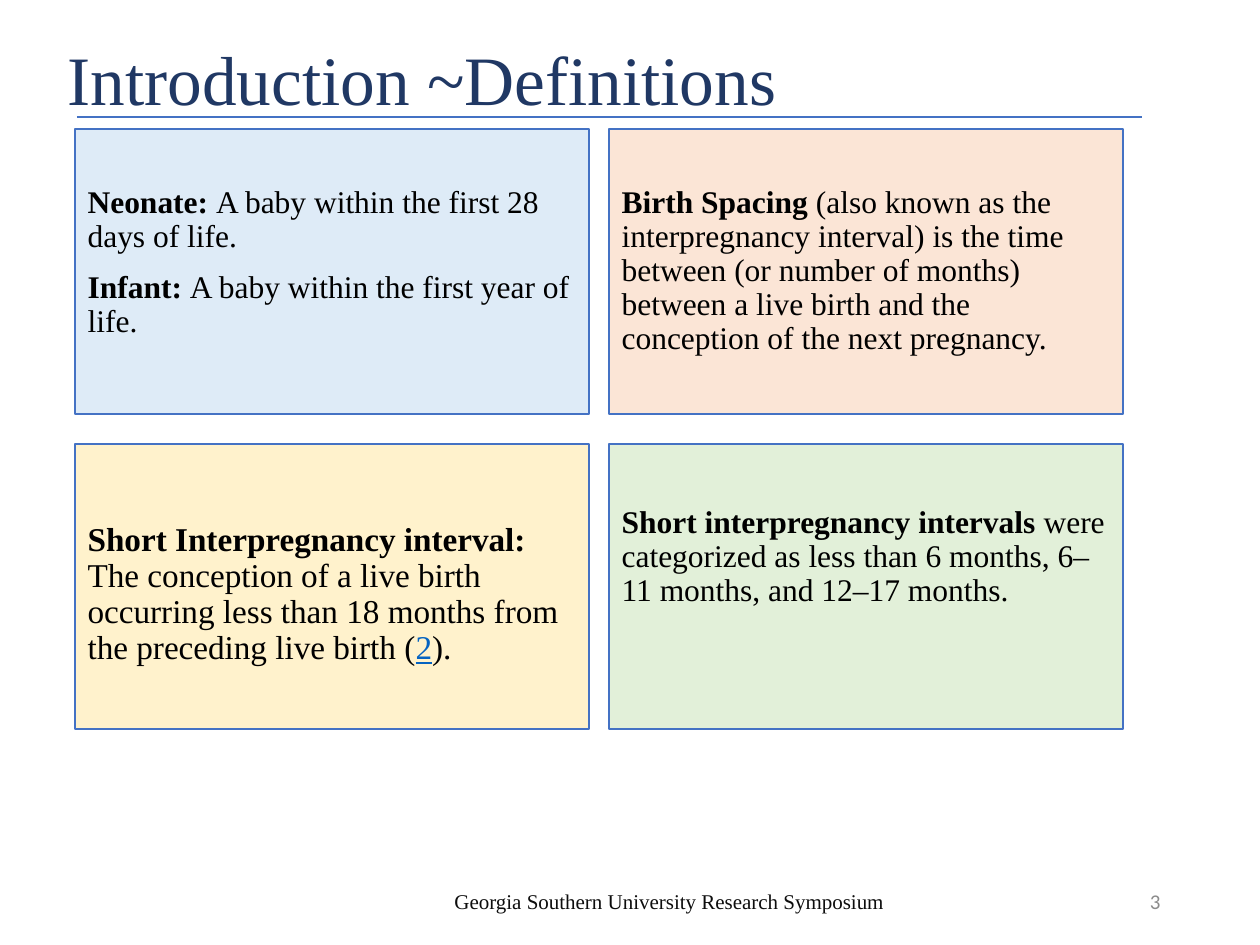
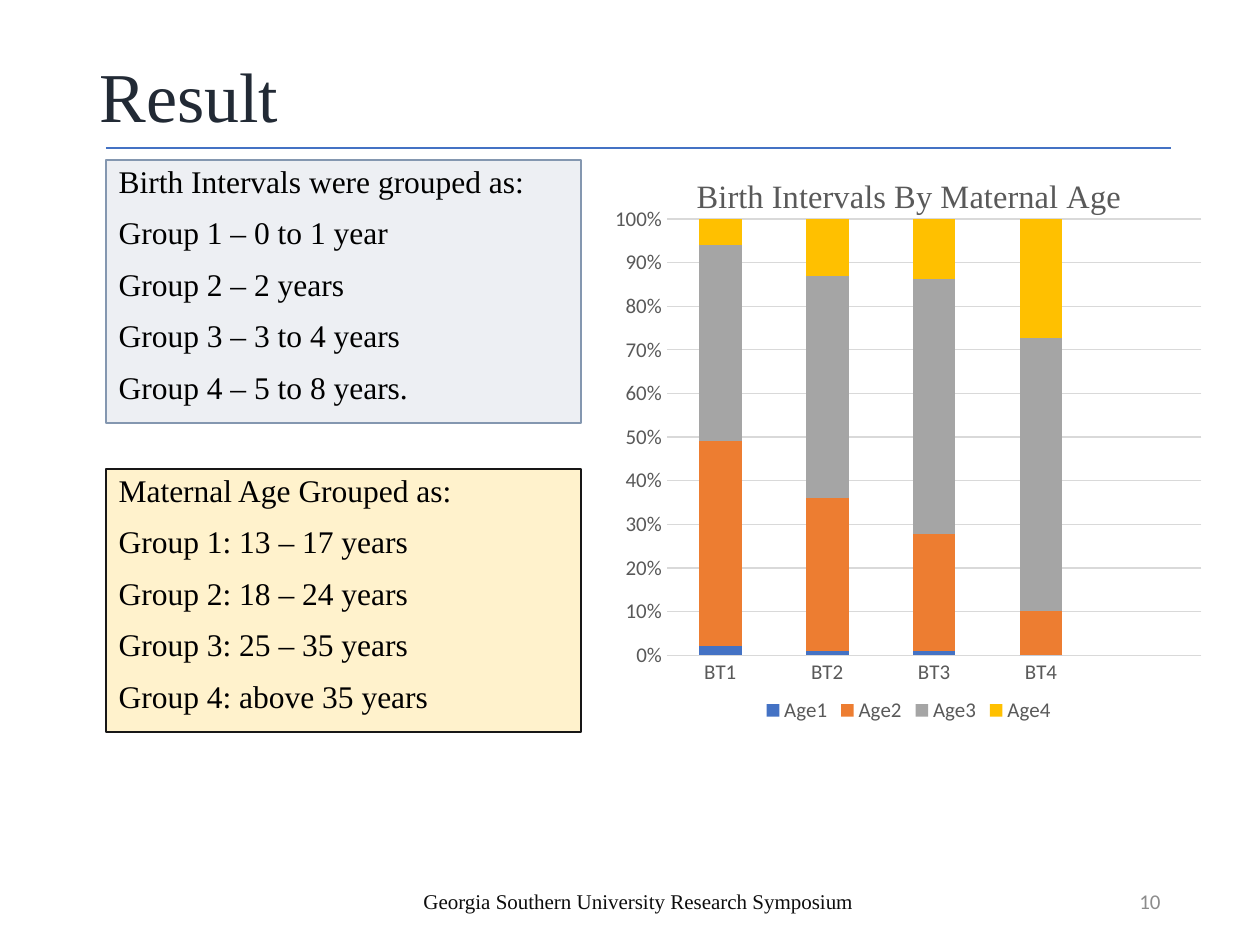
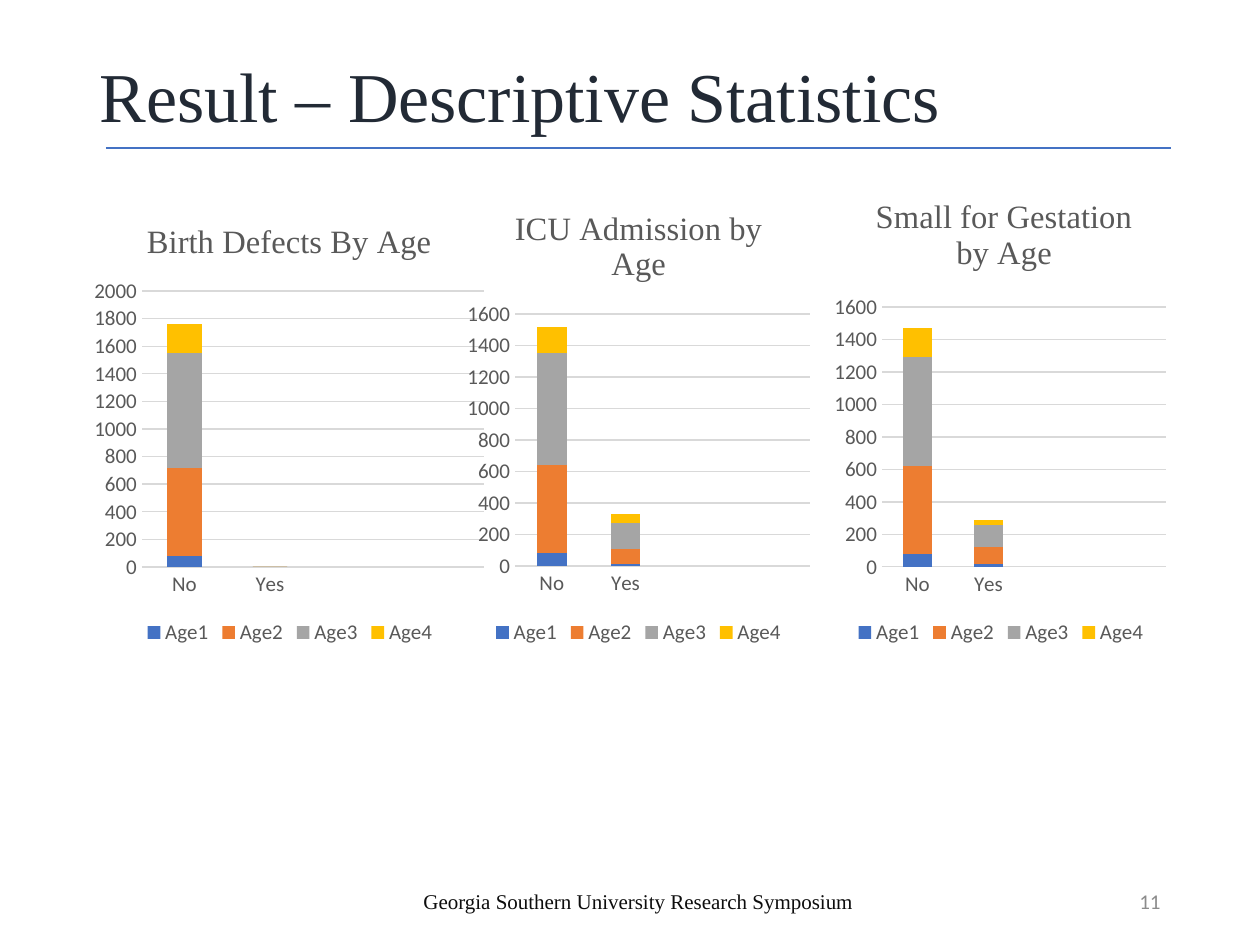
from dataclasses import dataclass
from lxml.etree import SubElement
from pptx import Presentation
from pptx.chart.data import CategoryChartData
from pptx.dml.color import RGBColor
from pptx.enum.chart import XL_CHART_TYPE, XL_LEGEND_POSITION, XL_TICK_MARK
from pptx.enum.shapes import MSO_CONNECTOR
from pptx.enum.text import MSO_ANCHOR, MSO_AUTO_SIZE, PP_ALIGN
from pptx.oxml import parse_xml
from pptx.oxml.ns import nsdecls, qn
from pptx.util import Pt

PX = 914400 / 126


@dataclass(frozen=True)
class Theme:
    serif: str = "Times New Roman"
    sans: str = "Calibri"
    navy: str = "203864"
    slate: str = "222A35"
    black: str = "000000"
    foot: str = "0D0D0D"
    page: str = "8C8C8C"
    link: str = "0563C1"
    blue: str = "4472C4"
    steel: str = "8497B0"
    dark: str = "181717"
    sky: str = "DEEBF7"
    peach: str = "FBE5D6"
    cream: str = "FFF2CC"
    mint: str = "E2F0D9"
    mist: str = "EDEFF3"
    label: str = "595959"
    grid: str = "D9D9D9"
    bars: tuple = ("4472C4", "ED7D31", "A5A5A5", "FFC000")
    body: float = 18
    small: float = 12
    head: float = 18.6
    line: float = 0.75


T = Theme()


def write(frame, paras, size, color, font=T.serif, align=PP_ALIGN.LEFT, tight=True):
    """Write paragraphs of (text, flags) runs; b is bold, u is link style."""
    frame.word_wrap = True
    frame.auto_size = MSO_AUTO_SIZE.NONE
    for n, runs in enumerate(paras):
        para = frame.paragraphs[0] if n == 0 else frame.add_paragraph()
        para.alignment = align
        para.line_spacing = 0.9 if tight else 1.0
        para.space_before = Pt(10 if n else 0)
        props = para._p.get_or_add_pPr()
        props.set("marL", "0")
        props.set("indent", "0")
        SubElement(props, qn("a:buNone"))
        for text, flags in runs:
            run = para.add_run()
            run.text = text
            run.font.name = font
            run.font.size = Pt(size)
            run.font.bold = "b" in flags
            run.font.underline = "u" in flags
            tint = T.link if "u" in flags else color
            run.font.color.rgb = RGBColor.from_string(tint)


def draw(slide, kind, box, plot, head, title, cats, rows, form):
    """Add a stacked chart; plot is its inner area and head its title corner."""
    data = CategoryChartData()
    data.categories = cats
    for n, row in enumerate(rows, 1):
        data.add_series(f"Age{n}", row)
    chart = slide.shapes.add_chart(kind, *[round(v * PX) for v in box], data).chart
    chart.font.name, chart.font.size = T.sans, Pt(T.small)
    chart.font.color.rgb = RGBColor.from_string(T.label)

    # Title
    chart.has_title = True
    run = chart.chart_title.text_frame.paragraphs[0].add_run()
    run.text = title
    run.font.name, run.font.size, run.font.bold = T.serif, Pt(T.head), False
    run.font.color.rgb = RGBColor.from_string(T.label)
    chart.chart_title.include_in_layout = False

    # Bars
    bars = chart.plots[0]
    bars.gap_width, bars.overlap, bars.vary_by_categories = 150, 100, False
    for series, tint in zip(bars.series, T.bars):
        series.format.fill.solid()
        series.format.fill.fore_color.rgb = RGBColor.from_string(tint)
        series.invert_if_negative = False

    # Axes and legend
    cat, val = chart.category_axis, chart.value_axis
    for axis in (cat, val):
        axis.major_tick_mark = axis.minor_tick_mark = XL_TICK_MARK.NONE
    val.has_major_gridlines = True
    for line in (cat.format.line, val.major_gridlines.format.line):
        line.color.rgb = RGBColor.from_string(T.grid)
        line.width = Pt(T.line)
    val.format.line.fill.background()
    val.tick_labels.number_format = form
    val.tick_labels.number_format_is_linked = False
    chart.has_legend = True
    chart.legend.position = XL_LEGEND_POSITION.BOTTOM
    chart.legend.include_in_layout = False

    # Fixed places of the title and the inner plot area
    left, top, wide, high = box
    spots = {"x": (plot[0] - left) / wide, "y": (plot[1] - top) / high,
             "w": plot[2] / wide, "h": plot[3] / high}
    corner = {"x": (head[0] - left) / wide, "y": (head[1] - top) / high}
    area = chart._chartSpace.chart.plotArea
    name = chart.chart_title._element
    for host, slot, vals in ((area, 0, spots), (name, 1, corner)):
        for old in host.findall(qn("c:layout")):
            host.remove(old)
        inner = '<c:layoutTarget val="inner"/>' if host is area else ""
        modes = "".join(f'<c:{k}Mode val="edge"/>' for k in "xy")
        sizes = "".join(f'<c:{k} val="{v:.3f}"/>' for k, v in vals.items())
        host.insert(slot, parse_xml(
            f'<c:layout {nsdecls("c")}><c:manualLayout>{inner}{modes}{sizes}'
            "</c:manualLayout></c:layout>"))


deck = Presentation()
deck.slide_width, deck.slide_height = round(1260 * PX), round(945 * PX)

# Shared frame: title, rule, footer and page number
pages = [
    # layout, title, title box, size, colour, rule x and y, footer x, number
    (4, "Introduction ~Definitions", (55, 39, 1086, 89), 39.6, T.navy, 77, 117, 417, "3"),
    (3, "Result", (87, 51, 1086, 98), 40, T.slate, 106, 148, 386, "10"),
    (5, "Result – Descriptive Statistics", (87, 51, 1086, 98), 40, T.slate, 106, 148, 386, "11"),
]
slides = []
for layout, title, box, size, color, left, top, foot, number in pages:
    slide = deck.slides.add_slide(deck.slide_layouts[layout])
    slides.append(slide)
    name = slide.shapes.title
    name.left, name.top, name.width, name.height = [round(v * PX) for v in box]
    name.text_frame.vertical_anchor = MSO_ANCHOR.MIDDLE
    write(name.text_frame, [[(title, "")]], size, color)
    rule = slide.shapes.add_connector(
        MSO_CONNECTOR.STRAIGHT, *[round(v * PX) for v in (left, top, left + 1065, top)])
    rule.line.color.rgb = RGBColor.from_string(T.blue)
    rule.line.width = Pt(T.line)
    SubElement(rule._element.spPr, qn("a:effectLst"))
    for x, wide, text, tint, font, align in (
            (foot, 505, "Georgia Southern University Research Symposium",
             T.foot, T.serif, PP_ALIGN.CENTER),
            (890, 283, number, T.page, T.sans, PP_ALIGN.RIGHT)):
        note = slide.shapes.add_textbox(*[round(v * PX) for v in (x, 876, wide, 50)])
        note.text_frame.vertical_anchor = MSO_ANCHOR.MIDDLE
        write(note.text_frame, [[(text, "")]], T.small, tint, font, align, False)
intro, result, stats = slides

# Text panels: slide, placeholder, box, top inset, fill, line, size, paragraphs
wide, high = 514, 285
cols, rows = (75, 609), (129, 444)
births = ["Birth Intervals were grouped as:", "Group 1 – 0 to 1 year",
          "Group 2 – 2 years", "Group 3 – 3 to 4 years", "Group 4 – 5 to 8 years."]
ages = ["Maternal Age Grouped as:", "Group 1: 13 – 17 years", "Group 2: 18 – 24 years",
        "Group 3: 25 – 35 years", "Group 4: above 35 years"]
panels = [
    (intro, 1, (cols[0], rows[0], wide, high), 57, T.sky, T.blue, T.body, [
        [("Neonate: ", "b"), ("A baby within the first 28 days of life.", "")],
        [("Infant: ", "b"), ("A baby within the first year of life.", "")]]),
    (intro, 2, (cols[1], rows[0], wide, high), 57, T.peach, T.blue, T.body, [
        [("Birth Spacing ", "b"),
         ("(also known as the interpregnancy interval) is the time between (or number of "
          "months) between a live birth and the conception of the next pregnancy.", "")]]),
    (intro, 3, (cols[0], rows[1], wide, high), 79, T.cream, T.blue, 19, [
        [("Short Interpregnancy interval: ", "b"),
         ("The conception of a live birth occurring less than 18 months from the "
          "preceding live birth (", ""), ("2", "u"), (").", "")]]),
    (intro, 4, (cols[1], rows[1], wide, high), 62, T.mint, T.blue, T.body, [
        [("Short interpregnancy intervals ", "b"),
         ("were categorized as less than 6 months, 6–11 months, and 12–17 months.", "")]]),
    (result, 1, (106, 160, 475, 263), 6, T.mist, T.steel, T.body,
     [[(text, "")] for text in births]),
    (result, 2, (106, 469, 475, 263), 6, T.cream, T.dark, T.body,
     [[(text, "")] for text in ages]),
]
for slide, slot, box, inset, fill, line, size, paras in panels:
    panel = slide.placeholders[slot]
    panel.left, panel.top, panel.width, panel.height = [round(v * PX) for v in box]
    panel.fill.solid()
    panel.fill.fore_color.rgb = RGBColor.from_string(fill)
    panel.line.color.rgb = RGBColor.from_string(line)
    panel.line.width = Pt(T.line)
    panel.text_frame.vertical_anchor = MSO_ANCHOR.TOP
    panel.text_frame.margin_top = round(inset * PX)
    write(panel.text_frame, paras, size, T.black)

# Birth intervals as shares, with an empty last place on the axis
draw(result, XL_CHART_TYPE.COLUMN_STACKED_100, (615, 160, 587, 568),
     (666, 219, 536, 436), (690, 170), "Birth Intervals By Maternal Age",
     ["BT1", "BT2", "BT3", "BT4"],
     [(2, 1, 1, 0, None), (47, 35, 27, 10, None),
      (45, 51, 59, 62, None), (6, 13, 14, 27, None)], "0%")

# Outcomes as counts, with two empty places on each axis
counts = [
    ((87, 199, 406, 451), (142, 291, 342, 276), (141, 215), "Birth Defects By Age",
     [(80, 0), (640, 0), (830, 0), (210, 0)]),
    ((460, 186, 357, 464), (515, 314, 295, 252), (509, 202), "ICU Admission by Age",
     [(80, 10), (560, 100), (710, 160), (170, 60)]),
    ((828, 186, 346, 464), (882, 307, 284, 260), (870, 190), "Small for Gestation by Age",
     [(80, 20), (540, 100), (670, 140), (180, 30)]),
]
for box, plot, head, title, pairs in counts:
    draw(stats, XL_CHART_TYPE.COLUMN_STACKED, box, plot, head, title, ["No", "Yes"],
         [pair + (None, None) for pair in pairs], "0")

deck.save("out.pptx")
